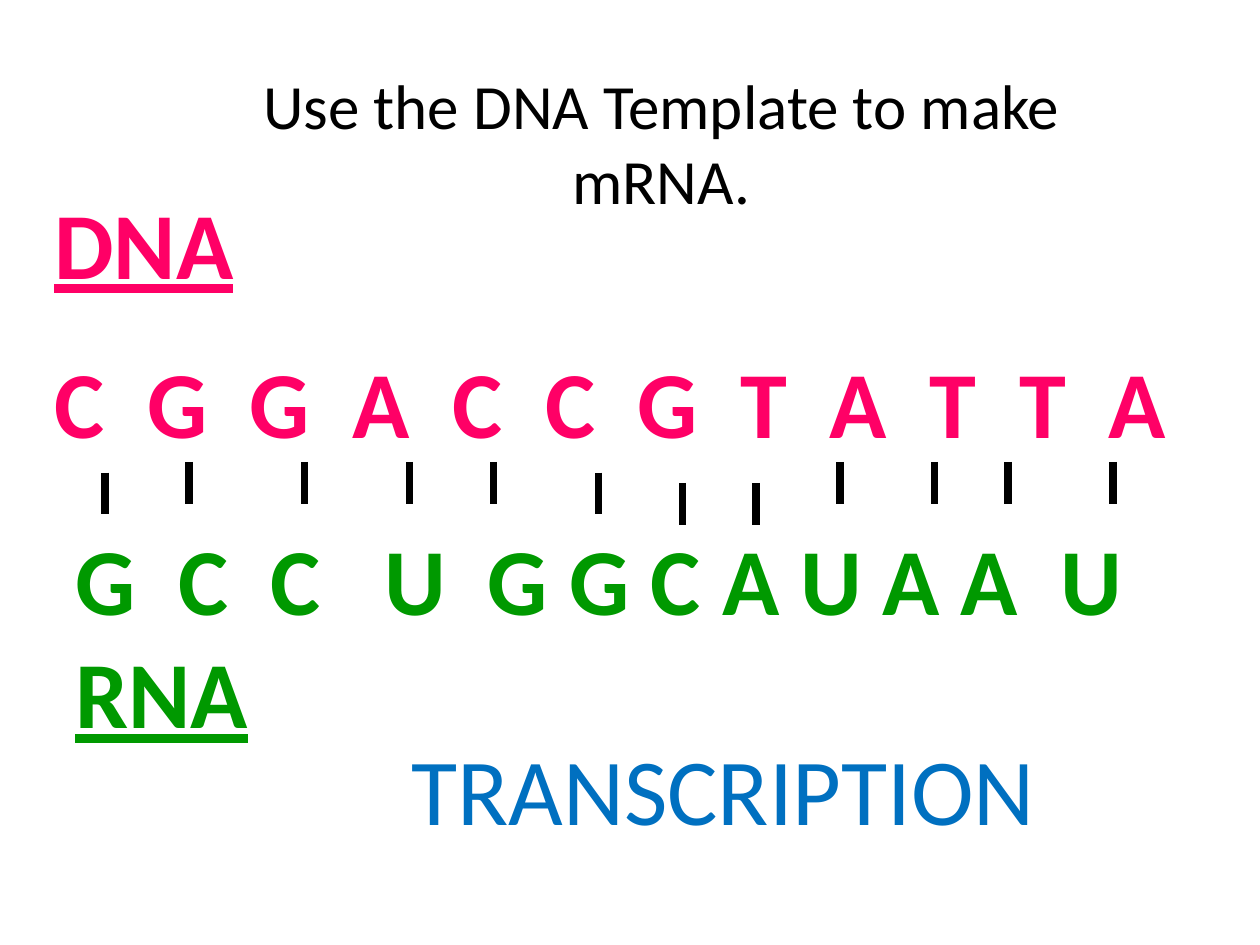
import pptx
import pptx.util
import pptx.dml.color
import pptx.enum.text
import pptx.enum.shapes
import pptx.oxml.ns
import lxml.etree

COLORS = {"title": "000000", "dna": "FF0066", "rna": "009900",
          "bond": "000000", "process": "0070C0"}

deck = pptx.Presentation()
deck.slide_width = pptx.util.Inches(10)
deck.slide_height = pptx.util.Inches(7.5)
slide = deck.slides.add_slide(deck.slide_layouts[6])
column = deck.slide_width / 120
row = deck.slide_height / 90


def add_text(box, color, lines, gap=0, align="LEFT", anchor="TOP"):
    left, top, width, height = box
    frame = slide.shapes.add_textbox(
        round(left * column), round(top * row),
        round(width * column), round(height * row)).text_frame
    frame.word_wrap = True
    frame.vertical_anchor = getattr(pptx.enum.text.MSO_ANCHOR, anchor)
    for index, (words, formats) in enumerate(lines):
        paragraph = frame.paragraphs[0] if index == 0 else frame.add_paragraph()
        paragraph.alignment = getattr(pptx.enum.text.PP_ALIGN, align)
        paragraph.space_before = pptx.util.Pt(gap if index else 0)
        run = paragraph.add_run()
        run.text = words
        run.font.color.rgb = pptx.dml.color.RGBColor.from_string(COLORS[color])
        for name, value in {"name": "Calibri", **formats}.items():
            setattr(run.font, name, value)
    return frame


def set_base_stops(paragraph, bases, gaps):
    properties = paragraph._p.get_or_add_pPr()
    stops = lxml.etree.SubElement(properties, pptx.oxml.ns.qn("a:tabLst"))
    position = 0
    for base, gap in zip(bases, gaps):
        position += base_widths[base] + gap * space_width
        lxml.etree.SubElement(stops, pptx.oxml.ns.qn("a:tab"),
                              pos=str(round(position * column)), algn="l")


large = {"size": pptx.util.Pt(54)}
strand = {**large, "bold": True}
heading = {**strand, "underline": True}
base_widths = {"A": 5.45, "C": 4.76, "G": 5.73, "T": 4.46, "U": 5.76}
space_width = 2.03
dna_bases = "CGGACCGTATTA"
rna_bases = "GCCUGGCAUAAU"

add_text((17, 6, 92, 15), "title",
         [("Use the DNA Template to make mRNA.", {"size": pptx.util.Pt(36)})],
         align="CENTER", anchor="MIDDLE")

dna = add_text((4, 17, 111, 28.4), "dna",
               [("DNA", heading), ("\t".join(dna_bases), strand)], gap=26)
set_base_stops(dna.paragraphs[1], dna_bases, [2] * 11)

rna = add_text((6, 49, 107.8, 23), "rna",
               [("\t".join(rna_bases), strand), ("RNA", heading)])
set_base_stops(rna.paragraphs[0], rna_bases, [2, 2, 3, 2, 1, 1, 1, 1, 1, 1, 2])

bond_columns = [10, 18, 29, 39, 47, 57, 65, 72, 80, 89, 96, 106]
bond_rows = [45, 44, 44, 44, 44, 45, 46, 46, 44, 44, 44, 44]
for across, down in zip(bond_columns, bond_rows):
    bond = slide.shapes.add_connector(
        pptx.enum.shapes.MSO_CONNECTOR.STRAIGHT,
        round(across * column), round(down * row),
        round(across * column), round((down + 4) * row))
    bond.line.width = pptx.util.Pt(4.5)
    bond.line.color.rgb = pptx.dml.color.RGBColor.from_string(COLORS["bond"])
    lxml.etree.SubElement(bond._element.spPr, pptx.oxml.ns.qn("a:effectLst"))

add_text((38, 69, 69, 12.1), "process", [("TRANSCRIPTION", large)])

deck.save("out.pptx")
